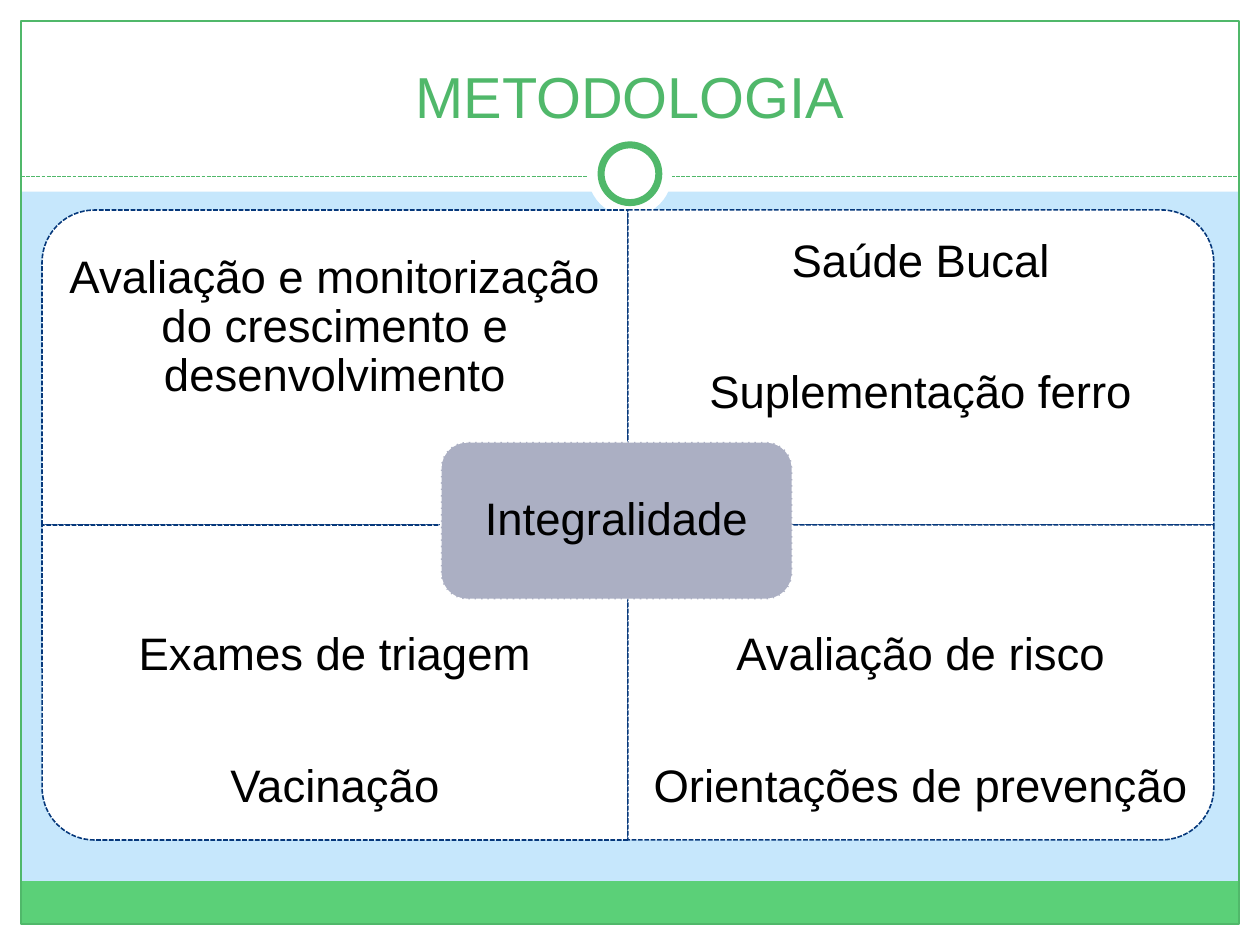
from pptx import Presentation
from pptx.dml.color import RGBColor
from pptx.enum.dml import MSO_LINE
from pptx.enum.shapes import MSO_CONNECTOR, MSO_SHAPE
from pptx.enum.text import MSO_ANCHOR, PP_ALIGN
from pptx.oxml.ns import qn
from pptx.util import Pt
from lxml.etree import SubElement

WHITE, GREEN, NAVY = "FFFFFF", "50B86A", "06387B"
LEFT, TOP, WIDE, HIGH = 24, 120, 334.8, 180  # first quadrant
TEXT_HIGH = 0.75 * HIGH


def color(text):
    return RGBColor.from_string(text)


def add_shape(slide, kind, x, y, w, h, fill=None, line=None, weight=0.75, dash=None):
    shape = slide.shapes.add_shape(kind, Pt(x), Pt(y), Pt(w), Pt(h))
    shape.shadow.inherit = False
    if fill:
        shape.fill.solid()
        shape.fill.fore_color.rgb = color(fill)
    else:
        shape.fill.background()
    if line:
        shape.line.color.rgb = color(line)
        shape.line.width = Pt(weight)
        shape.line.dash_style = dash
    else:
        shape.line.fill.background()
    return shape


def add_run(para, text, size, hue):
    run = para.add_run()
    run.text = text
    run.font.name = "Arial"
    run.font.size = Pt(size)
    run.font.color.rgb = color(hue)


def add_text(slide, x, y, w, h, inset, lines):
    frame = slide.shapes.add_textbox(Pt(x), Pt(y), Pt(w), Pt(h)).text_frame
    frame.word_wrap = True
    frame.vertical_anchor = MSO_ANCHOR.MIDDLE
    frame.margin_left = frame.margin_right = Pt(inset)
    frame.margin_top = frame.margin_bottom = Pt(inset)
    for i, line in enumerate(lines):
        para = frame.add_paragraph() if i else frame.paragraphs[0]
        para.alignment = PP_ALIGN.CENTER
        para.line_spacing = 0.9
        para.space_before = Pt(47 if i else 0)
        add_run(para, line, 26, "000000")


def add_frame(slide):
    # White margins, green band and outline
    rect = MSO_SHAPE.RECTANGLE
    for box in ((0, 528, 720, 12), (0, 0, 720, 109.5),
                (0, 0, 12, 540), (708, 0, 12, 540)):
        add_shape(slide, rect, *box, fill=WHITE)
    add_shape(slide, rect, 12, 503.5, 695.5, 24.5, fill="5BD078")
    add_shape(slide, rect, 12, 12, 696, 516, line=GREEN)
    # Dashed rule with a ring at its middle
    rule = slide.shapes.add_connector(
        MSO_CONNECTOR.STRAIGHT, Pt(12), Pt(100.8), Pt(708), Pt(100.8))
    rule.line.color.rgb = color(GREEN)
    rule.line.width = Pt(0.75)
    rule.line.dash_style = MSO_LINE.SQUARE_DOT
    SubElement(rule._element.spPr, qn("a:effectLst"))
    add_shape(slide, MSO_SHAPE.OVAL, 336, 75.6, 48, 48, fill=WHITE)
    add_shape(slide, MSO_SHAPE.OVAL, 343.5, 82.8, 33, 33, WHITE, GREEN, 4)


def set_title(slide, text):
    title = slide.shapes.title
    title.left, title.top, title.width, title.height = Pt(24), Pt(18), Pt(672), Pt(60)
    frame = title.text_frame
    frame.vertical_anchor = MSO_ANCHOR.BOTTOM
    para = frame.paragraphs[0]
    para.alignment = PP_ALIGN.CENTER
    add_run(para, text, 33, GREEN)
    slide.shapes._spTree.append(title._element)  # above the white margin


def add_quad(slide, col, row, turn, lines):
    x, y = LEFT + col * WIDE, TOP + row * HIGH
    # A quarter turn swaps the sides around the same centre
    w, h = (HIGH, WIDE) if turn % 180 else (WIDE, HIGH)
    shape = add_shape(slide, MSO_SHAPE.ROUND_1_RECTANGLE,
                      x + (WIDE - w) / 2, y + (HIGH - h) / 2, w, h,
                      WHITE, NAVY, 0.9, MSO_LINE.SQUARE_DOT)
    shape.rotation = turn
    add_text(slide, x, y + row * (HIGH - TEXT_HIGH), WIDE, TEXT_HIGH, 14.4, lines)


def add_core(slide, text):
    w, h = 0.6 * WIDE, HIGH / 2
    x, y = 251.9, TOP + HIGH - h / 2 - 2.5
    add_shape(slide, MSO_SHAPE.ROUNDED_RECTANGLE, x, y, w, h,
              "ABAFC3", WHITE, 0.9, MSO_LINE.SQUARE_DOT)
    add_text(slide, x + 4.4, y + 4.4, w - 8.8, h - 8.8, 7.9, [text])


def main():
    deck = Presentation()
    deck.slide_width, deck.slide_height = Pt(720), Pt(540)
    slide = deck.slides.add_slide(deck.slide_layouts[5])
    slide.background.fill.solid()
    slide.background.fill.fore_color.rgb = color("C6E7FC")

    add_frame(slide)
    set_title(slide, "METODOLOGIA")

    # Four quadrants around the core
    quads = (
        (0, 0, 270, ["Avaliação e monitorização do crescimento e desenvolvimento"]),
        (1, 0, 0, ["Saúde Bucal", "Suplementação ferro"]),
        (0, 1, 180, ["Exames de triagem", "Vacinação"]),
        (1, 1, 90, ["Avaliação de risco", "Orientações de prevenção"]),
    )
    for quad in quads:
        add_quad(slide, *quad)
    add_core(slide, "Integralidade")
    deck.save("out.pptx")


if __name__ == "__main__":
    main()
